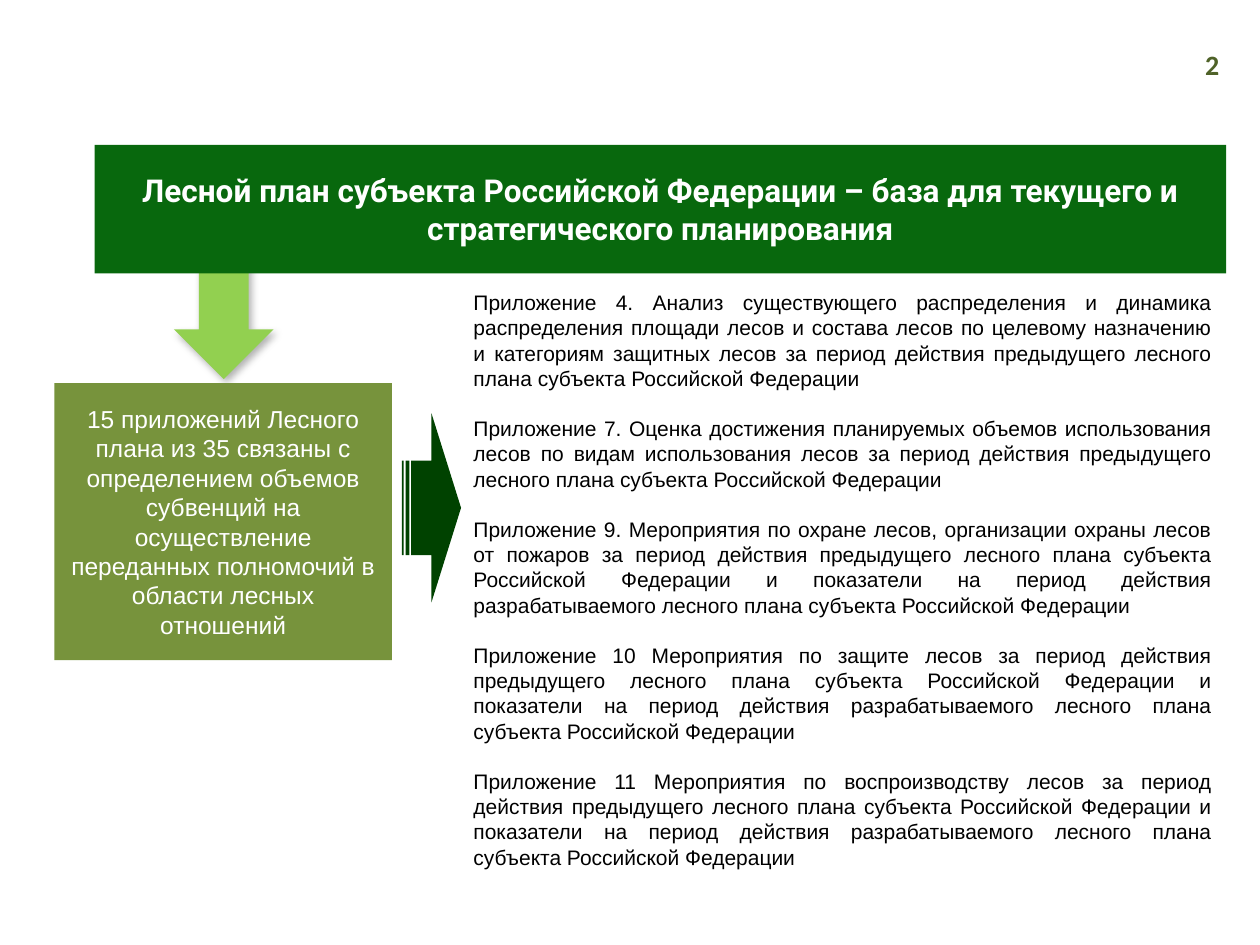
from lxml.etree import SubElement as Sub
from pptx import Presentation as Deck
from pptx.dml.color import RGBColor as Rgb
from pptx.enum.shapes import MSO_SHAPE as Kind
from pptx.enum.text import MSO_ANCHOR as Anchor, MSO_AUTO_SIZE as Fit, PP_ALIGN as Align
from pptx.oxml.ns import qn
from pptx.util import Pt

HEAD = "Лесной план субъекта Российской Федерации – база для текущего и стратегического планирования"
NOTE = ("15 приложений Лесного плана из 35 связаны с определением объемов субвенций "
        "на осуществление переданных полномочий в области лесных отношений")
PAST = "за период действия предыдущего лесного плана субъекта Российской Федерации"
NEXT = ("и показатели на период действия разрабатываемого лесного плана "
        "субъекта Российской Федерации")
ITEMS = [
    "Приложение 4. Анализ существующего распределения и динамика распределения площади лесов "
    f"и состава лесов по целевому назначению и категориям защитных лесов {PAST}",
    "Приложение 7. Оценка достижения планируемых объемов использования лесов "
    f"по видам использования лесов {PAST}",
    f"Приложение 9. Мероприятия по охране лесов, организации охраны лесов от пожаров {PAST} {NEXT}",
    f"Приложение 10 Мероприятия по защите лесов {PAST} {NEXT}",
    f"Приложение 11 Мероприятия по воспроизводству лесов {PAST} {NEXT}",
]


def color(code):
    """Turn a hex string into a colour."""
    return Rgb.from_string(code)


def style(item, form):
    """Set each attribute named in a dict."""
    for name, value in form.items():
        setattr(item, name, value)


def write(shape, texts, form, ink, align=Align.CENTER, anchor=Anchor.MIDDLE, gap=0):
    """Fill a shape with evenly spaced paragraphs."""
    frame = shape.text_frame
    style(frame, {"word_wrap": True, "vertical_anchor": anchor})
    for i, text in enumerate(texts):
        para = frame.paragraphs[0] if i == 0 else frame.add_paragraph()
        style(para, {"text": text, "alignment": align, "space_before": Pt(gap if i else 0)})
        style(para.font, form)
        para.font.color.rgb = color(ink)
    return frame


def block(slide, kind, box, fill):
    """Add a plain filled shape."""
    shape = slide.shapes.add_shape(kind, *map(Pt, box))
    shape.shadow.inherit = False
    shape.fill.solid()
    shape.fill.fore_color.rgb = color(fill)
    shape.line.fill.background()
    return shape


def label(slide, box):
    """Add an empty text box."""
    return slide.shapes.add_textbox(*map(Pt, box))


def shade(shape, code, alpha, blur, dist, angle):
    """Give a shape a soft outer shadow."""
    list_ = shape._element.spPr.find(qn("a:effectLst"))
    outer = Sub(list_, qn("a:outerShdw"), blurRad=str(Pt(blur)), dist=str(Pt(dist)),
                dir=str(angle * 60000), algn="ctr", rotWithShape="0")
    tint = Sub(outer, qn("a:srgbClr"), val=code)
    Sub(tint, qn("a:alpha"), val=str(alpha * 1000))


def main():
    """Build the forest plan slide."""
    deck = Deck()
    style(deck, {"slide_width": Pt(720), "slide_height": Pt(540)})
    slide = deck.slides.add_slide(deck.slide_layouts[6])

    down = block(slide, Kind.DOWN_ARROW, (99.4, 139.7, 56.9, 77), "92D050")
    shade(down, "000000", 30, 4.5, 2.6, 53)
    page = label(slide, (675.4, 22.3, 34.6, 28.8))
    write(page, ["2"], {"name": "Calibri", "size": Pt(16), "bold": True}, "4F6228")
    head = block(slide, Kind.RECTANGLE, (54, 82.8, 646.6, 73.4), "08680D")
    write(head, [HEAD], {"name": "Roboto", "size": Pt(18), "bold": True}, "FFFFFF")
    note = block(slide, Kind.RECTANGLE, (31, 218.9, 193, 158.4), "77933C")
    write(note, [NOTE], {"name": "Arial", "size": Pt(14)}, "FFFFFF")
    body = label(slide, (263.5, 162, 436.3, 363.6))
    frame = write(body, ITEMS, {"name": "Arial", "size": Pt(12)}, "000000",
                  Align.JUSTIFY, Anchor.TOP, 14.4)
    frame.auto_size = Fit.SHAPE_TO_FIT_TEXT
    block(slide, Kind.STRIPED_RIGHT_ARROW, (229.7, 236.2, 33.8, 108), "004200")

    deck.save("out.pptx")


if __name__ == "__main__":
    main()
